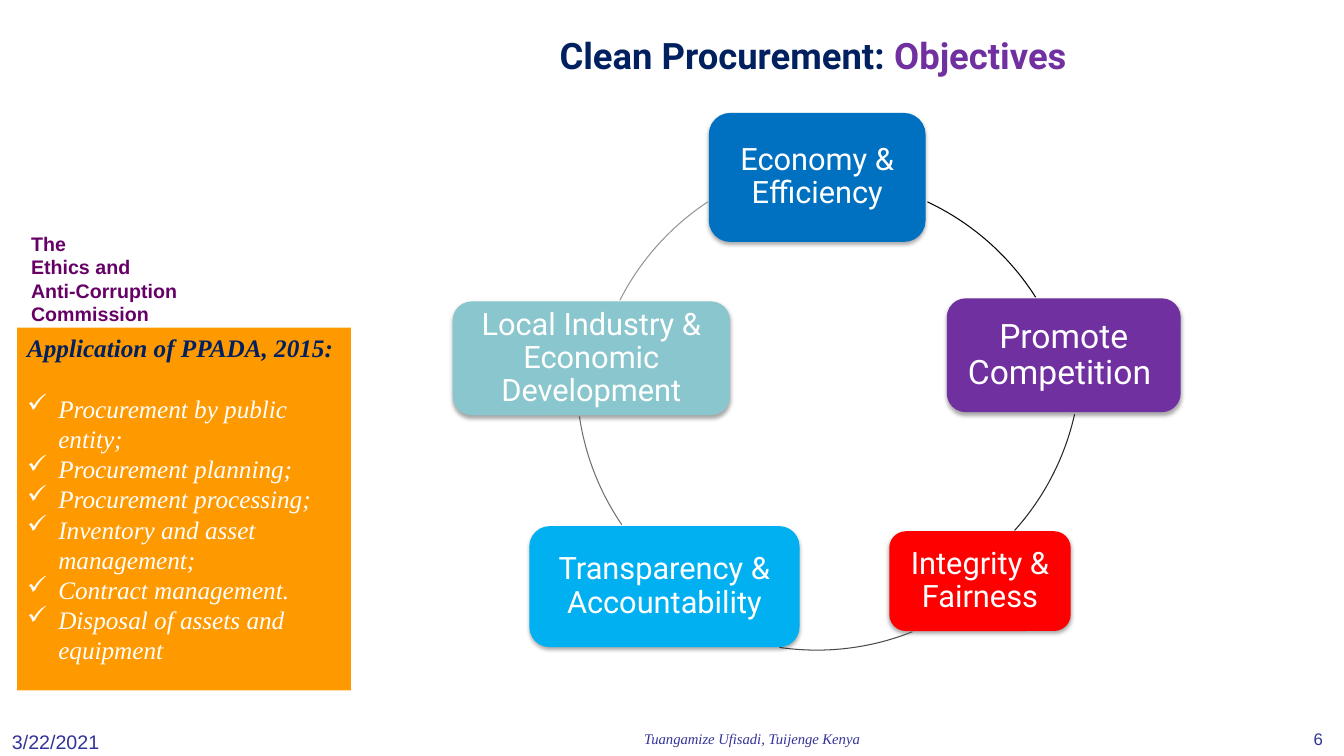
from math import atan2, degrees

from lxml.etree import SubElement
from pptx import Presentation
from pptx.dml.color import RGBColor
from pptx.enum.shapes import MSO_SHAPE as Shape
from pptx.enum.text import MSO_ANCHOR as Anchor, PP_ALIGN as Align
from pptx.oxml.ns import qn
from pptx.util import Inches, Pt

COLORS = {
    "navy": "002060", "purple": "7030A0", "plum": "660066", "white": "FFFFFF",
    "blue": "0070C0", "red": "FF0000", "sky": "00B0F0", "teal": "8AC6CD",
    "orange": "FF9900", "indigo": "333399",
    "arc 1": "000000", "arc 2": "252525", "arc 3": "4A4A4A",
    "arc 4": "707070", "arc 5": "959595",
}

TITLE = [("Clean Procurement: ", "navy"), ("Objectives", "purple")]

# text, fill, font size, (left, top, width, height)
OBJECTIVES = [
    ("Economy & Efficiency", "blue", 22, (7.03, 1.12, 2.15, 1.28)),
    ("Promote Competition ", "purple", 24, (9.39, 2.96, 2.32, 1.13)),
    ("Integrity & Fairness", "red", 22, (8.82, 5.27, 1.8, 0.99)),
    ("Transparency & Accountability", "sky", 22, (5.25, 5.22, 2.68, 1.2)),
    ("Local Industry & Economic Development", "teal", 22, (4.49, 2.99, 2.75, 1.13)),
]

# Clockwise arcs: circle's top left corner, start point, end point, colour
CIRCLE_SIZE = 5.12
ARCS = [
    ((5.55, 1.76), (9.2, 2), (10.27, 2.95), "arc 1"),
    ((5.6, 0.99), (10.66, 4.11), (10.06, 5.26), "arc 2"),
    ((5.54, 1.33), (9.05, 6.27), (7.73, 6.42), "arc 3"),
    ((5.72, 1.2), (6.16, 5.21), (5.75, 4.13), "arc 4"),
    ((5.87, 1.58), (6.15, 2.98), (7.02, 2), "arc 5"),
]

APPLICATION_HEADING = "Application of PPADA, 2015:"
APPLICATION_ITEMS = [
    "Procurement by public entity;",
    "Procurement planning;",
    "Procurement processing;",
    "Inventory and asset management;",
    "Contract management.",
    "Disposal of assets and equipment",
]

# lines, (left, top, width, height), font, size, colour, bold, italic, alignment
LABELS = [
    (["The", "Ethics and", "Anti-Corruption", "Commission"],
     (0.21, 2.25, 2.4, 1.04), "Arial", 14, "plum", True, False, Align.LEFT),
    (["Tuangamize Ufisadi, Tuijenge Kenya"],
     (4.86, 7.19, 5.2, 0.31), "Times New Roman", 10.5, "indigo", False, True, Align.CENTER),
    (["3/22/2021"],
     (0.02, 7.19, 2.84, 0.28), "Arial", 14, "indigo", False, False, Align.LEFT),
    (["6"],
     (12.19, 7.18, 1.03, 0.32), "Arial", 12, "indigo", False, False, Align.RIGHT),
]


def rgb(name):
    return RGBColor.from_string(COLORS[name])


def inches(box):
    return [Inches(value) for value in box]


def set_font(font, name, size, color, bold=False, italic=False):
    font.name, font.size = name, Pt(size)
    font.bold, font.italic = bold, italic
    font.color.rgb = rgb(color)


def add_filled(slide, kind, box, color):
    shape = slide.shapes.add_shape(kind, *inches(box))
    shape.shadow.inherit = False
    shape.fill.solid()
    shape.fill.fore_color.rgb = rgb(color)
    shape.line.fill.background()
    shape.text_frame.word_wrap = True
    return shape


def add_soft_shadow(shape):
    effects = shape._element.spPr.find(qn("a:effectLst"))
    shadow = SubElement(effects, qn("a:outerShdw"), blurRad=str(Pt(3.1)),
                        dist=str(Pt(1.8)), dir="5400000", rotWithShape="0")
    color = SubElement(shadow, qn("a:srgbClr"), val="000000")
    SubElement(color, qn("a:alpha"), val="35000")


def add_objective(slide, text, color, size, box):
    shape = add_filled(slide, Shape.ROUNDED_RECTANGLE, box, color)
    add_soft_shadow(shape)
    frame = shape.text_frame
    frame.vertical_anchor = Anchor.MIDDLE
    frame.margin_left = frame.margin_right = Inches(0.09)
    frame.margin_top = frame.margin_bottom = Inches(0.09)
    paragraph = frame.paragraphs[0]
    paragraph.text = text
    paragraph.alignment = Align.CENTER
    paragraph.line_spacing = 0.9
    set_font(paragraph.font, "Roboto", size, "white")


def add_arc(slide, corner, start, end, color):
    arc = slide.shapes.add_shape(Shape.ARC, *inches((*corner, CIRCLE_SIZE, CIRCLE_SIZE)))
    arc.shadow.inherit = False
    arc.fill.background()
    arc.line.color.rgb = rgb(color)
    arc.line.width = Pt(0.75)
    center_x, center_y = (value + CIRCLE_SIZE / 2 for value in corner)
    for index, (x, y) in enumerate((start, end)):
        angle = degrees(atan2(y - center_y, x - center_x)) % 360
        arc.adjustments[index] = angle * 0.6  # 60000ths of a degree over 100000


def add_check_mark(paragraph):
    properties = paragraph._p.get_or_add_pPr()
    properties.set("marL", str(Inches(0.31)))
    properties.set("indent", str(Inches(-0.31)))
    SubElement(properties, qn("a:buChar"), char="✓")


def add_application_panel(slide):
    panel = add_filled(slide, Shape.RECTANGLE, (0.17, 3.25, 3.31, 3.6), "orange")
    frame = panel.text_frame
    frame.vertical_anchor = Anchor.TOP
    heading = frame.paragraphs[0]
    heading.text = APPLICATION_HEADING
    heading.alignment = Align.LEFT
    set_font(heading.font, "Times New Roman", 18, "navy", True, True)
    for index, item in enumerate(APPLICATION_ITEMS):
        paragraph = frame.add_paragraph()
        paragraph.text = item
        paragraph.alignment = Align.LEFT
        add_check_mark(paragraph)
        if index == 0:
            paragraph.space_before = Pt(21.5)
        set_font(paragraph.font, "Times New Roman", 18, "white", italic=True)


def add_label(slide, lines, box, font, size, color, bold, italic, alignment):
    frame = slide.shapes.add_textbox(*inches(box)).text_frame
    frame.word_wrap = True
    for index, line in enumerate(lines):
        paragraph = frame.add_paragraph() if index else frame.paragraphs[0]
        paragraph.text = line
        paragraph.alignment = alignment
        set_font(paragraph.font, font, size, color, bold, italic)


def fill_title(title):
    title.left, title.top, title.width, title.height = inches((3.13, 0.17, 9.87, 0.75))
    title.text_frame.vertical_anchor = Anchor.MIDDLE
    paragraph = title.text_frame.paragraphs[0]
    paragraph.alignment = Align.CENTER
    for text, color in TITLE:
        run = paragraph.add_run()
        run.text = text
        set_font(run.font, "Roboto", 26, color, bold=True)


def main():
    presentation = Presentation()
    presentation.slide_width, presentation.slide_height = Inches(13.33), Inches(7.5)
    slide = presentation.slides.add_slide(presentation.slide_layouts[5])
    fill_title(slide.shapes.title)
    for objective, arc in zip(OBJECTIVES, ARCS):
        add_objective(slide, *objective)
        add_arc(slide, *arc)
    add_application_panel(slide)
    for label in LABELS:
        add_label(slide, *label)
    presentation.save("out.pptx")


if __name__ == "__main__":
    main()
